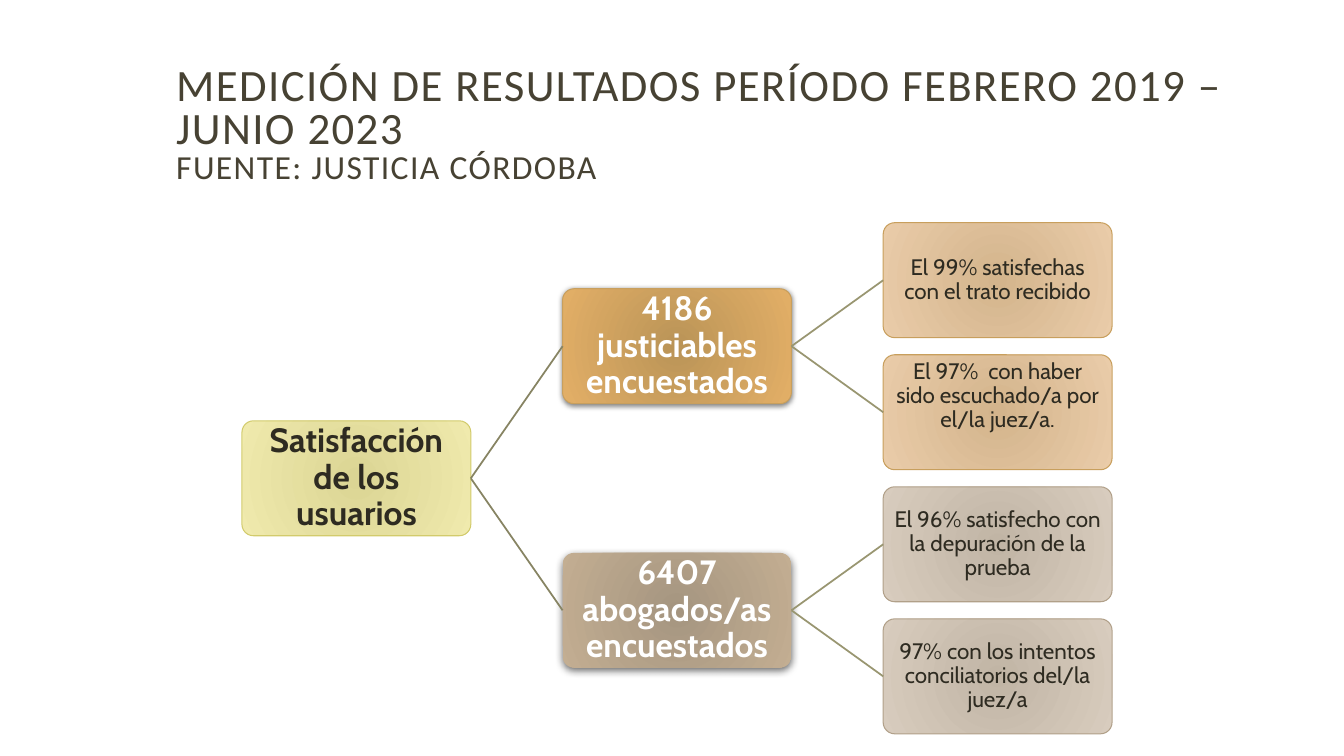
from dataclasses import dataclass
from typing import Optional

from lxml import etree
from pptx import Presentation
from pptx.dml.color import RGBColor
from pptx.enum.shapes import MSO_CONNECTOR, MSO_SHAPE
from pptx.enum.text import MSO_ANCHOR, PP_ALIGN
from pptx.oxml.ns import qn
from pptx.util import Inches, Pt

ROUNDED = MSO_SHAPE.ROUNDED_RECTANGLE
STRAIGHT = MSO_CONNECTOR.STRAIGHT
MIDDLE, TOP = MSO_ANCHOR.MIDDLE, MSO_ANCHOR.TOP
CENTER = PP_ALIGN.CENTER

# Tree grid, in inches
TREE_LEFT, TREE_TOP = 2.4, 2.21
COLUMN_STEP, ROW_STEP = 3.18, 1.31
NODE_WIDTH, NODE_HEIGHT = 2.27, 1.14
LEFT_SITE, RIGHT_SITE = 1, 3

DARK, WHITE = "2E2B21", "FFFFFF"


@dataclass(frozen=True)
class Shadow:
    blur: float
    distance: float
    opacity: int


@dataclass(frozen=True)
class Style:
    inner: str
    outer: str
    border: Optional[str]
    text: str = DARK
    size: int = 16
    bold: bool = False
    shadow: Optional[Shadow] = None


@dataclass(frozen=True)
class Node:
    label: str
    column: int
    row: float
    style: Style
    parent: Optional[int] = None
    lift: float = 0  # extra bottom margin that raises the label


USERS = Style("DBD594", "F0EAAD", "D2CB6C", size=24, bold=True)
LITIGANTS = Style("BA9457", "E3AF67", "C89F5D", WHITE, 24, True, Shadow(4, 1, 50))
LAWYERS = Style("A59580", "C3AE92", None, WHITE, 24, True, Shadow(6, 2, 60))
LITIGANT_RESULT = Style("D3B48C", "EACCA9", "C89F5D")
LAWYER_RESULT = Style("C1B5A5", "D8CCBE", "B1A089")

NODES = [
    Node("Satisfacción de los usuarios", 0, 1.5, USERS),
    Node("4186 justiciables encuestados", 1, 0.5, LITIGANTS, 0),
    Node("6407 abogados/as encuestados", 1, 2.5, LAWYERS, 0),
    Node("El 99% satisfechas con el trato recibido", 2, 0, LITIGANT_RESULT, 1),
    Node("El 97%  con haber sido escuchado/a por el/la juez/a.", 2, 1,
         LITIGANT_RESULT, 1, 0.32),
    Node("El 96% satisfecho con la depuración de la prueba", 2, 2, LAWYER_RESULT, 2),
    Node("97% con los intentos conciliatorios del/la juez/a", 2, 3, LAWYER_RESULT, 2),
]
BRANCH_COLORS = {1: "878463", 2: "999671"}


def rgb(color: str) -> RGBColor:
    return RGBColor.from_string(color)


def add_run(paragraph, text: str, font: str, size: int, color: str,
            bold: bool = False):
    run = paragraph.add_run()
    run.text = text
    run.font.name = font
    run.font.size = Pt(size)
    run.font.bold = bold
    run.font.color.rgb = rgb(color)
    return run


def fill_radial(shape, inner: str, outer: str) -> None:
    shape.fill.gradient()
    for stop, color in zip(shape.fill.gradient_stops, (inner, outer)):
        stop.color.rgb = rgb(color)
    gradient = shape._element.spPr.find(qn("a:gradFill"))
    gradient.remove(gradient.find(qn("a:lin")))
    circle = etree.SubElement(gradient, qn("a:path"), {"path": "circle"})
    etree.SubElement(circle, qn("a:fillToRect"), dict.fromkeys("ltrb", "100000"))


def cast_shadow(shape, shadow: Shadow) -> None:
    effects = shape._element.spPr.find(qn("a:effectLst"))
    outer = etree.SubElement(effects, qn("a:outerShdw"), {
        "blurRad": str(Pt(shadow.blur)), "dist": str(Pt(shadow.distance)),
        "dir": "5400000", "rotWithShape": "0"})
    color = etree.SubElement(outer, qn("a:srgbClr"), {"val": "000000"})
    etree.SubElement(color, qn("a:alpha"), {"val": str(shadow.opacity * 1000)})


def add_node(slide, node: Node):
    style = node.style
    box = slide.shapes.add_shape(
        ROUNDED, Inches(TREE_LEFT + node.column * COLUMN_STEP),
        Inches(TREE_TOP + node.row * ROW_STEP),
        Inches(NODE_WIDTH), Inches(NODE_HEIGHT))
    box.adjustments[0] = 0.1
    fill_radial(box, style.inner, style.outer)
    if style.border:
        box.line.color.rgb = rgb(style.border)
        box.line.width = Pt(0.75)
    else:
        box.line.fill.background()
    box.shadow.inherit = False
    if style.shadow:
        cast_shadow(box, style.shadow)

    frame = box.text_frame
    frame.word_wrap = True
    frame.vertical_anchor = MIDDLE
    frame.margin_left = frame.margin_right = frame.margin_top = Inches(0.05)
    frame.margin_bottom = Inches(0.05 + node.lift)
    label = frame.paragraphs[0]
    label.alignment = CENTER
    label.line_spacing = 0.9
    add_run(label, node.label, "Cabin", style.size, style.text, style.bold)
    return box


def add_branch(slide, parent, child, color: str) -> None:
    branch = slide.shapes.add_connector(STRAIGHT, 0, 0, 0, 0)
    branch.begin_connect(parent, RIGHT_SITE)
    branch.end_connect(child, LEFT_SITE)
    branch.line.color.rgb = rgb(color)
    branch.line.width = Pt(1.25)
    etree.SubElement(branch._element.spPr, qn("a:effectLst"))


def add_heading(slide) -> None:
    heading = slide.shapes.add_textbox(
        Inches(1.65), Inches(0.61), Inches(10.64), Inches(1.23))
    frame = heading.text_frame
    frame.word_wrap = True
    frame.vertical_anchor = TOP
    frame.margin_top = Inches(0.06)
    paragraph = frame.paragraphs[0]
    paragraph.line_spacing = 0.8
    title = add_run(
        paragraph, "MEDICIÓN DE RESULTADOS PERÍODO FEBRERO 2019 – JUNIO 2023",
        "Calibri", 32, "474233")
    paragraph.add_line_break()
    source = add_run(paragraph, "FUENTE: JUSTICIA CÓRDOBA", "Calibri", 24, "474233")
    for run in (title, source):
        run.font._element.set("spc", "100")


def main() -> None:
    deck = Presentation()
    deck.slide_width, deck.slide_height = Inches(13.33), Inches(7.5)
    slide = deck.slides.add_slide(deck.slide_layouts[6])
    add_heading(slide)
    boxes = [add_node(slide, node) for node in NODES]
    for node, box in zip(NODES, boxes):
        if node.parent is not None:
            add_branch(slide, boxes[node.parent], box, BRANCH_COLORS[node.column])
    deck.save("out.pptx")


if __name__ == "__main__":
    main()
